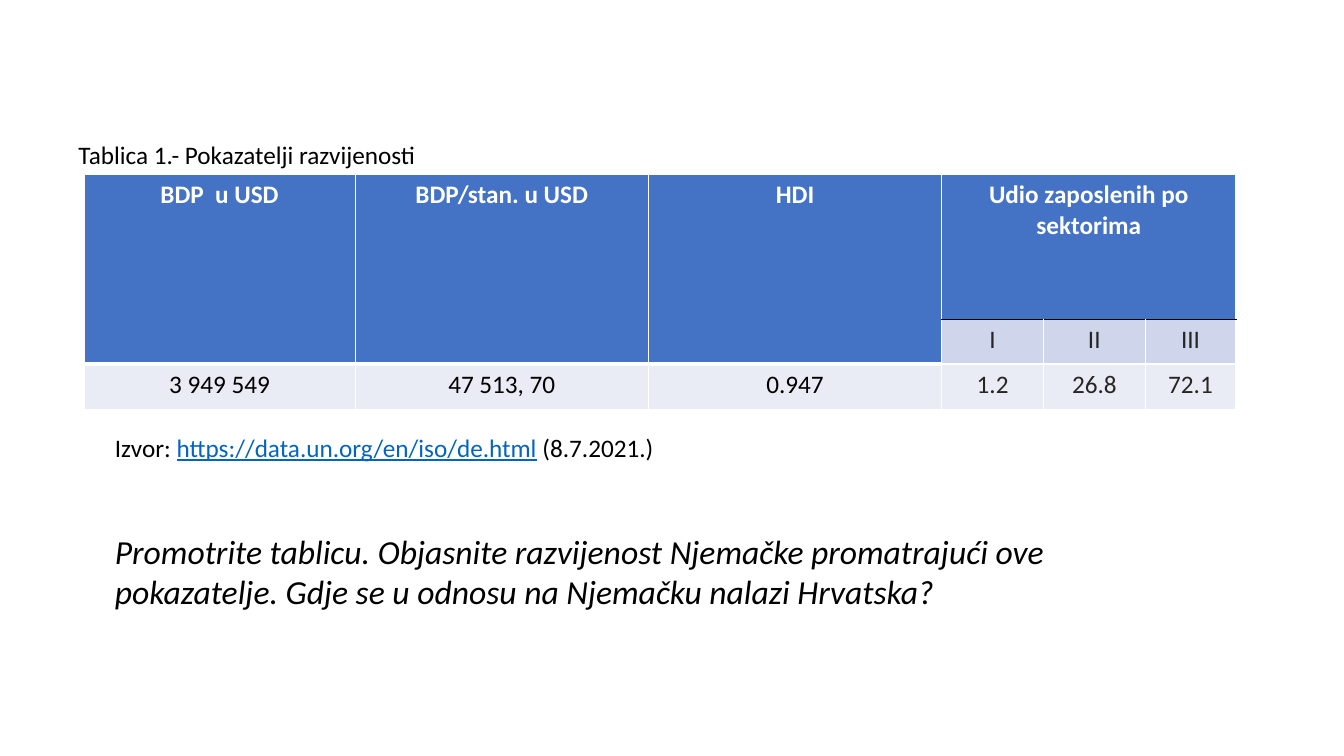
from dataclasses import dataclass

from lxml.etree import SubElement
from pptx import Presentation
from pptx.dml.color import RGBColor
from pptx.enum.text import PP_ALIGN
from pptx.oxml.ns import qn
from pptx.util import Pt


@dataclass(frozen=True)
class Theme:
    font: str = "Calibri"
    body: int = 18
    task: int = 24
    black: str = "000000"
    white: str = "FFFFFF"
    dark: str = "262626"
    link: str = "0563C1"
    head: str = "4472C4"
    band: str = "CFD5EA"
    pale: str = "E9EBF5"


theme = Theme()


def add_run(para, text, color, size=theme.body):
    run = para.add_run()
    run.text = text
    run.font.name = theme.font
    run.font.size = Pt(size)
    run.font.color.rgb = RGBColor.from_string(color)
    return run


def add_edge(cell, side, color, width):
    """Draw one cell border; call in the order L, R, T, B, before the fill."""
    props = cell._tc.get_or_add_tcPr()
    line = SubElement(props, qn(f"a:ln{side}"), w=str(Pt(width)))
    fill = SubElement(line, qn("a:solidFill"))
    SubElement(fill, qn("a:srgbClr"), val=color)


deck = Presentation()
deck.slide_width, deck.slide_height = Pt(960), Pt(540)
slide = deck.slides.add_slide(deck.slide_layouts[6])

# Table of indicators
widths = [193.7, 209.5, 209.5, 72.7, 72.7, 64.8]
heights = [103.7, 31.7, 32.4]
rows = [
    ["BDP  u USD", "BDP/stan. u USD", "HDI", "Udio zaposlenih po sektorima", "", ""],
    ["", "", "", "I", "II", "III"],
    ["3 949 549", "47 513, 70", "0.947", "1.2", "26.8", "72.1"],
]
frame = slide.shapes.add_table(
    len(rows), len(widths), Pt(60), Pt(124.6), Pt(sum(widths)), Pt(sum(heights))
)
table = frame.table
for col, width in zip(table.columns, widths):
    col.width = Pt(width)
for row, height in zip(table.rows, heights):
    row.height = Pt(height)

for r, texts in enumerate(rows):
    for c, text in enumerate(texts):
        cell = table.cell(r, c)
        sector = c > 2
        title = r == 0 or (r == 1 and not sector)
        thin, thick = (theme.white, 1), (theme.white, 3)
        rule = (theme.black, 1)
        top = bottom = thin
        if sector:
            top = rule if r == 1 else thin
            bottom = rule if r == 0 else thin
        else:
            top = thick if r == 2 else thin
            bottom = thick if r < 2 else thin
        for side, edge in zip("LRTB", (thin, thin, top, bottom)):
            add_edge(cell, side, *edge)
        cell.fill.solid()
        shade = theme.head if title else (theme.band if r == 1 else theme.pale)
        cell.fill.fore_color.rgb = RGBColor.from_string(shade)
        if text:
            para = cell.text_frame.paragraphs[0]
            para.alignment = PP_ALIGN.CENTER
            ink = theme.white if title else (theme.dark if sector else theme.black)
            add_run(para, text, ink).font.bold = title

for c in range(3):
    table.cell(0, c).merge(table.cell(1, c))
table.cell(0, 3).merge(table.cell(0, 5))

# Source, task and caption
notes = [
    ((75, 305.3, 422.6, 29), theme.body, False, [
        ("Izvor: ", theme.black),
        ("https://data.un.org/en/iso/de.html", theme.link),
        (" (8.7.2021.)", theme.black),
    ]),
    ((75, 375.8, 768.2, 65.5), theme.task, True, [
        ("Promotrite tablicu. Objasnite razvijenost Njemačke promatrajući ove "
         "pokazatelje. Gdje se u odnosu na Njemačku nalazi Hrvatska?", theme.black),
    ]),
    ((49, 95.8, 530.6, 29), theme.body, False, [
        ("Tablica 1.- Pokazatelji razvijenosti", theme.black),
    ]),
]
for place, size, slant, parts in notes:
    box = slide.shapes.add_textbox(*map(Pt, place))
    box.text_frame.word_wrap = True
    para = box.text_frame.paragraphs[0]
    for text, color in parts:
        run = add_run(para, text, color, size)
        run.font.italic = slant
        run.font.underline = color == theme.link

deck.save("out.pptx")
